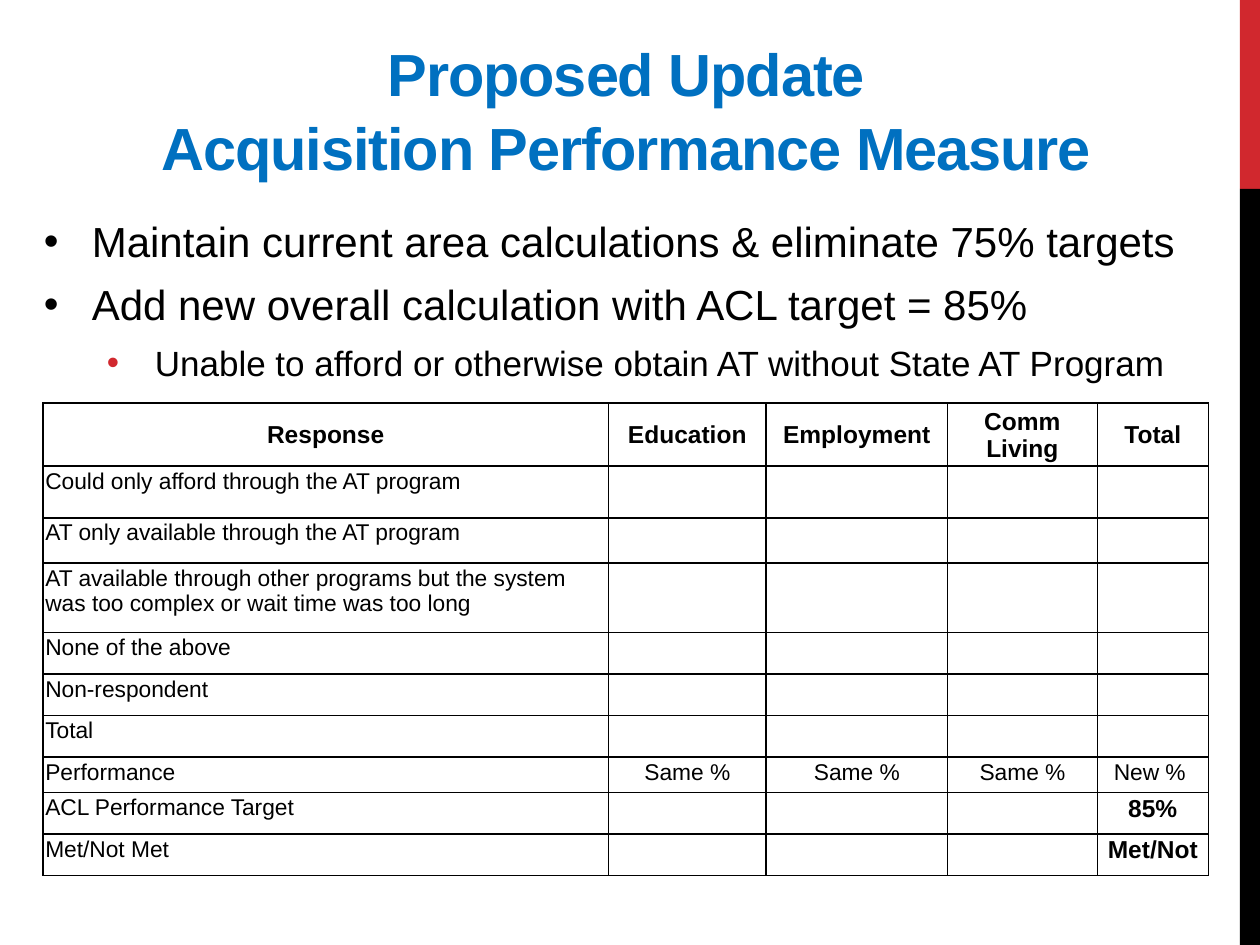
from lxml.etree import SubElement
from pptx import Presentation
from pptx.dml.color import RGBColor
from pptx.enum.shapes import MSO_SHAPE as Shape
from pptx.enum.text import MSO_ANCHOR as Anchor, MSO_AUTO_SIZE as AutoSize, PP_ALIGN as Align
from pptx.oxml.ns import qn
from pptx.util import Inches, Pt

THEME = {
    "font": "Arial",
    "black": "000000", "white": "FFFFFF", "red": "D1282E", "blue": "0070C0",
    "title": 34, "point": 24, "subpoint": 20, "header": 14, "cell": 13,
}

TITLE = "Proposed Update\vAcquisition Performance Measure"
POINTS = [
    (0, "Maintain current area calculations & eliminate 75% targets"),
    (0, "Add new overall calculation with ACL target = 85%"),
    (1, "Unable to afford or otherwise obtain AT without State AT Program"),
]
POINT_LEVELS = [("point", "black", 0.38, 6), ("subpoint", "red", 0.88, 0)]
HEADERS = ["Response", "Education", "Employment", "Comm Living", "Total"]
COLUMN_WIDTHS = [4.49, 1.25, 1.44, 1.19, 0.88]
HEADER_HEIGHT = 0.5
RESPONSES = [
    (0.41, "Could only afford through the AT program", []),
    (0.36, "AT only available through the AT program", []),
    (0.55, "AT available through other programs but the system was too complex "
           "or wait time was too long", []),
    (0.3, "None of the above", []),
    (0.3, "Non-respondent", []),
    (0.3, "Total", []),
    (0.28, "Performance", ["Same %", "Same %", "Same %", "New % "]),
    (0.3, "ACL Performance Target", ["", "", "", "85%"]),
    (0.3, "Met/Not Met", ["", "", "", "Met/Not"]),
]
EMPHASIZED = HEADERS + ["85%", "Met/Not"]
SIDEBAR = [("red", 0, 1.5), ("black", 1.5, 6)]


def color(name):
    return RGBColor.from_string(THEME[name])


def write(paragraph, text, size, ink="black", bold=False, align=Align.LEFT,
          after=0, spacing=None, tracking=None):
    paragraph.text = text
    paragraph.alignment = align
    paragraph.space_before = Pt(0)
    paragraph.space_after = Pt(after)
    if spacing:
        paragraph.line_spacing = spacing
    for run in paragraph.runs:
        run.font.name = THEME["font"]
        run.font.size = Pt(THEME[size])
        run.font.bold = bold
        run.font.color.rgb = color(ink)
        if tracking:
            run.font._element.set("spc", str(round(tracking * 100)))


def add_bullet(paragraph, ink, margin):
    properties = paragraph._p.get_or_add_pPr()
    properties.set("marL", str(Inches(margin)))
    properties.set("indent", str(Inches(-0.38)))
    bullet_color = SubElement(properties, qn("a:buClr"))
    SubElement(bullet_color, qn("a:srgbClr"), val=THEME[ink])
    SubElement(properties, qn("a:buFont"), typeface=THEME["font"])
    SubElement(properties, qn("a:buChar"), char="•")


def add_borders(cell):
    properties = cell._tc.get_or_add_tcPr()
    for side in ("lnL", "lnR", "lnT", "lnB"):
        border = SubElement(properties, qn(f"a:{side}"), w=str(Pt(1)))
        fill = SubElement(border, qn("a:solidFill"))
        SubElement(fill, qn("a:srgbClr"), val=THEME["black"])


def add_sidebar(slide):
    for ink, top, height in SIDEBAR:
        band = slide.shapes.add_shape(
            Shape.RECTANGLE, Inches(9.84), Inches(top), Inches(0.16), Inches(height))
        band.shadow.inherit = False
        band.fill.solid()
        band.fill.fore_color.rgb = color(ink)
        band.line.fill.background()


def add_title(slide):
    title = slide.shapes.title
    title.left, title.top = Inches(0.17), Inches(0.33)
    title.width, title.height = Inches(9.6), Inches(1.17)
    frame = title.text_frame
    frame.auto_size = AutoSize.NONE
    frame.vertical_anchor = Anchor.BOTTOM
    write(frame.paragraphs[0], TITLE, "title", ink="blue", bold=True,
          align=Align.CENTER, spacing=1.04, tracking=-0.6)


def add_points(slide):
    box = slide.shapes.add_textbox(Inches(0.25), Inches(1.64), Inches(9.52), Inches(1.42))
    frame = box.text_frame
    frame.word_wrap = True
    for index, (level, text) in enumerate(POINTS):
        paragraph = frame.add_paragraph() if index else frame.paragraphs[0]
        size, bullet_ink, margin, after = POINT_LEVELS[level]
        paragraph.level = level
        write(paragraph, text, size, after=after, spacing=1.05)
        add_bullet(paragraph, bullet_ink, margin)


def add_responses(slide):
    rows = [(HEADER_HEIGHT, HEADERS)]
    rows += [(height, [label] + (values or [""] * 4)) for height, label, values in RESPONSES]
    table = slide.shapes.add_table(
        len(rows), len(HEADERS), Inches(0.34), Inches(3.2),
        Inches(sum(COLUMN_WIDTHS)), Inches(sum(height for height, _ in rows))).table
    table.first_row = table.horz_banding = False
    for column, width in zip(table.columns, COLUMN_WIDTHS):
        column.width = Inches(width)
    for row, (height, texts) in enumerate(rows):
        table.rows[row].height = Inches(height)
        for column, text in enumerate(texts):
            cell = table.cell(row, column)
            cell.margin_left = cell.margin_right = cell.margin_top = Inches(0.02)
            cell.margin_bottom = Inches(0.01)
            cell.vertical_anchor = Anchor.TOP if row else Anchor.MIDDLE
            add_borders(cell)
            cell.fill.solid()
            cell.fill.fore_color.rgb = color("white")
            strong = row == 0 or (column > 0 and text in EMPHASIZED)
            write(cell.text_frame.paragraphs[0], text, "header" if strong else "cell",
                  bold=strong, align=Align.CENTER if row == 0 or column else Align.LEFT)


def main():
    deck = Presentation()
    deck.slide_width, deck.slide_height = Inches(10), Inches(7.5)
    slide = deck.slides.add_slide(deck.slide_layouts[5])
    add_sidebar(slide)
    add_title(slide)
    add_points(slide)
    add_responses(slide)
    deck.save("out.pptx")


if __name__ == "__main__":
    main()
